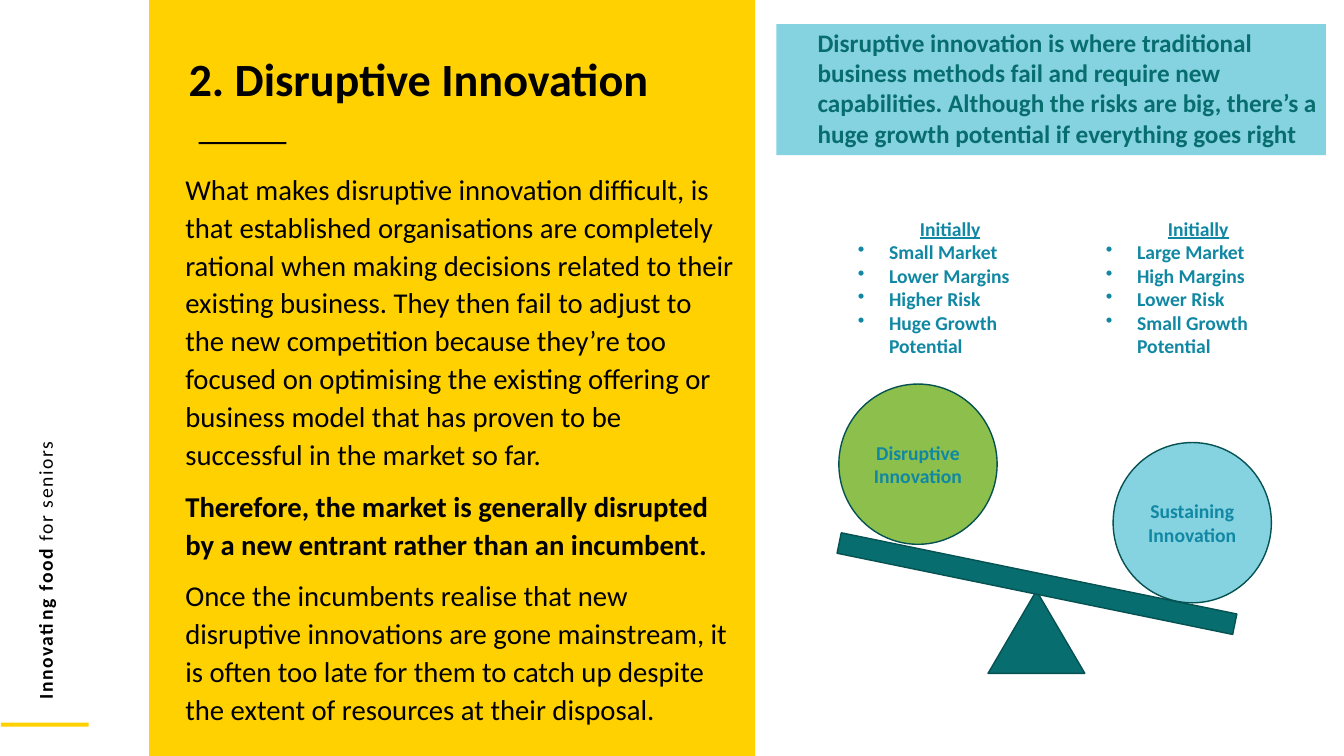
from lxml import etree
from pptx import Presentation
from pptx.dml.color import RGBColor
from pptx.enum.shapes import MSO_SHAPE
from pptx.enum.text import MSO_ANCHOR, PP_ALIGN
from pptx.oxml.ns import qn
from pptx.util import Pt

PX = 9144  # 100 px to the inch
FONT = "Calibri"
RECT, TRI = MSO_SHAPE.RECTANGLE, MSO_SHAPE.ISOSCELES_TRIANGLE
BEAM, BALL = MSO_SHAPE.MATH_MINUS, MSO_SHAPE.FLOWCHART_CONNECTOR
LEFT, CENTER = PP_ALIGN.LEFT, PP_ALIGN.CENTER
TOP, MIDDLE = MSO_ANCHOR.TOP, MSO_ANCHOR.MIDDLE
COLORS = {
    "yellow": "FFD100", "black": "000000", "sky": "85D2E1", "teal": "086D6E",
    "edge": "065151", "green": "8CBF4B", "blue": "1188A3",
}

BODY = [
    "What makes disruptive innovation difficult, is that established organisations "
    "are completely rational when making decisions related to their existing business. "
    "They then fail to adjust to the new competition because they’re too focused on "
    "optimising the existing offering or business model that has proven to be "
    "successful in the market so far.",
    "Therefore, the market is generally disrupted by a new entrant rather than an incumbent.",
    "Once the incumbents realise that new disruptive innovations are gone mainstream, "
    "it is often too late for them to catch up despite the extent of resources at "
    "their disposal.",
]
CALLOUT = (
    "Disruptive innovation is where traditional business methods fail and require new "
    "capabilities. Although the risks are big, there’s a huge growth potential if "
    "everything goes right"
)
# Ball label, ball fill, ball offset, list offset, list points
SIDES = [
    ("Disruptive", "green", (31, 171), (40, 0),
     ["Small Market", "Lower Margins", "Higher Risk", "Huge Growth Potential"]),
    ("Sustaining", "sky", (303, 229), (286, 0),
     ["Large Market", "High Margins", "Lower Risk", "Small Growth Potential"]),
]


def rgb(name):
    return RGBColor.from_string(COLORS[name])


def emu(box):
    return [n * PX for n in box]


def add_shape(slide, kind, box, fill, edge=None):
    shape = slide.shapes.add_shape(kind, *emu(box))
    shape.shadow.inherit = False
    shape.fill.solid()
    shape.fill.fore_color.rgb = rgb(fill)
    if edge:
        shape.line.color.rgb = rgb(edge)
        shape.line.width = Pt(1)
    else:
        shape.line.fill.background()
    return shape


def set_text(shape, lines, size, color, bold=False, align=LEFT, anchor=TOP):
    frame = shape.text_frame
    frame.word_wrap = True
    frame.vertical_anchor = anchor
    frame.text = "\n".join(lines)
    for para in frame.paragraphs:
        para.alignment = align
        font = para.font
        font.name, font.size, font.bold = FONT, Pt(size), bold
        font.color.rgb = rgb(color)
    return frame.paragraphs


def add_text(slide, box, lines, size, color, bold=False):
    shape = slide.shapes.add_textbox(*emu(box))
    return shape, set_text(shape, lines, size, color, bold)


def indent(para, left, first, mark=None):
    props = para._p.get_or_add_pPr()
    props.set("marL", str(left * PX))
    props.set("indent", str(first * PX))
    if mark:
        bullet = etree.Element(qn("a:buChar"), char=mark)
        props.insert_element_before(bullet, "a:tabLst", "a:defRPr", "a:extLst")


def add_side(slide, box):
    """Vertical tagline with its rule below."""
    x, y, w, h = box
    add_shape(slide, RECT, (x + 1, y + 717, 87, 4), "yellow")
    long, thin = 754, 34
    spot = (x + 45 - long // 2, y + 327 - thin // 2, long, thin)
    label, paras = add_text(slide, spot, [""], 14, "black")
    label.rotation = 270
    for words, bold in (("Innovating food ", True), ("for seniors", False)):
        run = paras[0].add_run()
        run.text = words
        run.font.bold = bold
        run._r.get_or_add_rPr().set("spc", "110")


def add_panel(slide, box):
    """Yellow panel with title, rule and body text."""
    x, y, w, h = box
    add_shape(slide, RECT, box, "yellow")
    add_shape(slide, RECT, (x + 49, y + 141, 87, 2), "black")

    title = slide.shapes.title
    slide.shapes._spTree.append(title._element)  # bring in front of the panel
    title.left, title.top, title.width, title.height = emu((x + 29, y + 49, 516, 64))
    paras = set_text(title, ["2. Disruptive Innovation"], 33, "black", True, anchor=MIDDLE)
    paras[0].line_spacing = 0.9

    spot = (x + 18, y + 162, 574, 555)
    paras = add_text(slide, spot, BODY, 20.5, "black")[1]
    for i, para in enumerate(paras):
        indent(para, 8, 0)
        para.line_spacing = 1.1
        para.space_before = Pt(10 if i else 0)
    paras[1].font.bold = True


def add_callout(slide, box):
    x, y, w, h = box
    add_shape(slide, RECT, box, "sky")
    add_text(slide, (x + 31, y - 2, 521, 131), [CALLOUT], 18, "teal", True)


def add_list(slide, box, points):
    head, *rest = add_text(slide, box, ["Initially"] + points, 14, "blue", True)[1]
    head.alignment = CENTER
    head.font.underline = True
    for para in rest:
        indent(para, 31, -31, "•")


def add_scale(slide, box):
    """Seesaw with two balls and a list above each."""
    x, y, w, h = box
    add_shape(slide, TRI, (x + 179, y + 376, 96, 82), "teal", "edge")
    beam = add_shape(slide, BEAM, (x - 45, y + 325, 545, 88), "teal", "edge")
    beam.rotation = 11.6
    for name, fill, (bx, by), (lx, ly), points in SIDES:
        ball = add_shape(slide, BALL, (x + bx, y + by, 157, 159), fill, "edge")
        set_text(ball, [name, "Innovation"], 14, "blue", True, CENTER, MIDDLE)
        add_list(slide, (x + lx, y + ly, 203, 151), points)


def main():
    deck = Presentation()
    deck.slide_width, deck.slide_height = emu((1333, 750))
    slide = deck.slides.add_slide(deck.slide_layouts[5])
    add_side(slide, (0, 0, 148, 750))
    add_panel(slide, (148, 0, 601, 750))
    add_callout(slide, (770, 24, 545, 130))
    add_scale(slide, (801, 210, 500, 460))
    deck.save("out.pptx")


if __name__ == "__main__":
    main()
